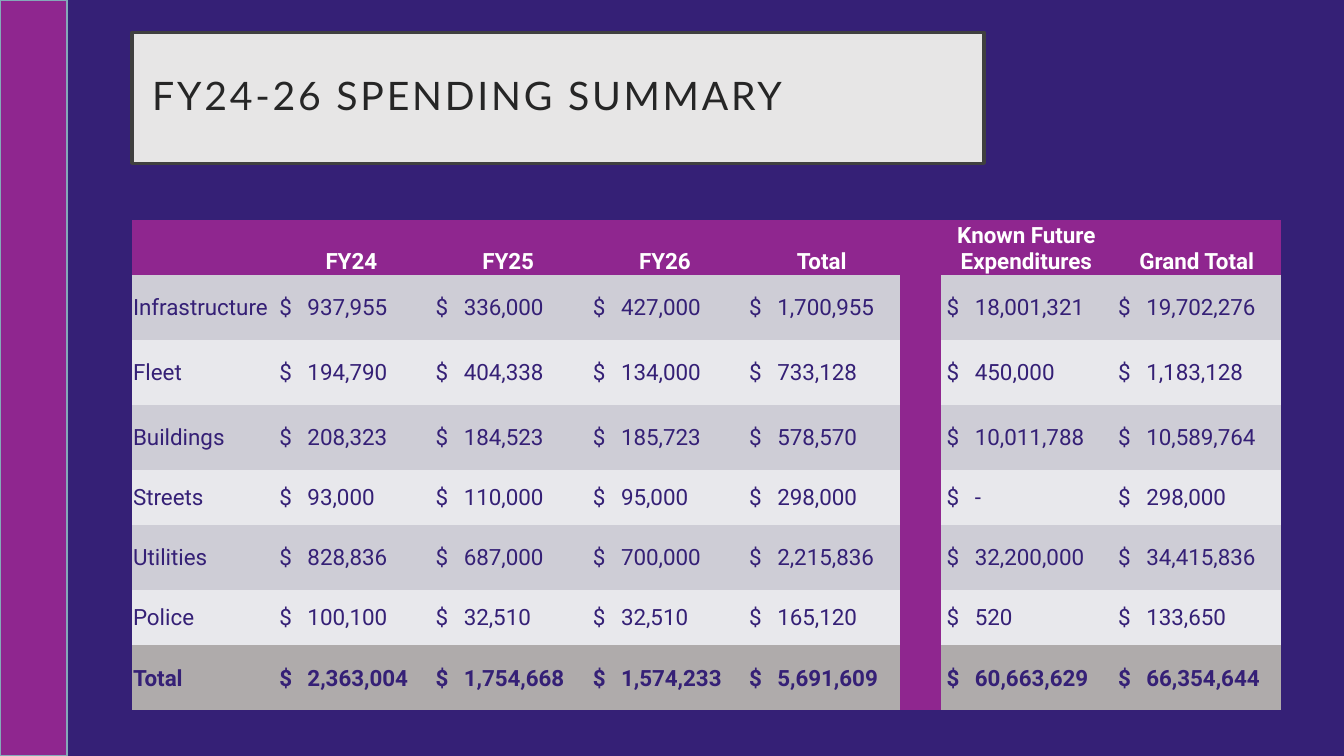
from pptx import Presentation
from pptx.dml.color import RGBColor
from pptx.enum.shapes import MSO_SHAPE
from pptx.enum.text import MSO_ANCHOR, MSO_AUTO_SIZE, PP_ALIGN
from pptx.oxml import parse_xml
from pptx.oxml.ns import nsdecls
from pptx.util import Inches, Pt

PURPLE, PLUM, GREY, WHITE = "352076", "8F268F", "AFABAB", "FFFFFF"
BANDS = ["E8E8EC", "CECDD6"]
WIDE, HIGH = 13.33, 7.5
LEFT = 1.31
COLS = [1.4, 1.55, 1.56, 1.55, 1.56, 0.4, 1.7, 1.68]
ROWS = [11, 13, 13, 13, 11, 13, 11, 13]
GAP = 5  # the plum column between the two blocks
DATA = """
|FY24|FY25|FY26|Total||Known Future Expenditures|Grand Total
Infrastructure|937,955|336,000|427,000|1,700,955||18,001,321|19,702,276
Fleet|194,790|404,338|134,000|733,128||450,000|1,183,128
Buildings|208,323|184,523|185,723|578,570||10,011,788|10,589,764
Streets|93,000|110,000|95,000|298,000||-|298,000
Utilities|828,836|687,000|700,000|2,215,836||32,200,000|34,415,836
Police|100,100|32,510|32,510|165,120||520|133,650
Total|2,363,004|1,754,668|1,574,233|5,691,609||60,663,629|66,354,644
"""


def paint(fill, color):
    fill.solid()
    fill.fore_color.rgb = RGBColor.from_string(color)


def style(font, color, **values):
    paint(font.fill, color)
    for name, value in values.items():
        setattr(font, name, value)


deck = Presentation()
deck.slide_width, deck.slide_height = Inches(WIDE), Inches(HIGH)
slide = deck.slides.add_slide(deck.slide_layouts[5])
paint(slide.background.fill, PURPLE)

# Side bar
bar = slide.shapes.add_shape(MSO_SHAPE.RECTANGLE, 0, 0, Inches(WIDE / 20), Inches(HIGH))
bar.shadow.inherit = False
paint(bar.fill, PLUM)
paint(bar.line.fill, "84A9B9")
bar.line.width = Pt(1)

# Title
title = slide.shapes.title
title.left, title.top, title.width, title.height = map(Inches, (LEFT, 0.32, 8.45, 1.3))
paint(title.fill, "E7E6E6")
paint(title.line.fill, "404040")
title.line.width = Pt(2.5)
frame = title.text_frame
frame.text = "FY24-26 SPENDING SUMMARY"
pad = Inches(0.2)
look = {"margin_left": pad, "margin_right": pad, "margin_top": pad, "margin_bottom": pad,
        "vertical_anchor": MSO_ANCHOR.MIDDLE, "word_wrap": True, "auto_size": MSO_AUTO_SIZE.NONE}
for name, value in look.items():
    setattr(frame, name, value)
head = frame.paragraphs[0]
head.alignment, head.line_spacing = PP_ALIGN.LEFT, 0.9
style(head.runs[0].font, "262626", name="Lato", size=Pt(28))
head.runs[0].font._element.set("spc", "200")

# Spending table
grid = [line.split("|") for line in DATA.strip().splitlines()]
tall = 4.87
table = slide.shapes.add_table(len(ROWS), len(COLS), Inches(LEFT), Inches(2.18),
                               Inches(sum(COLS)), Inches(tall)).table
table.first_row = table.horz_banding = False
table._tbl.tblPr[0].text = "{2D5ABB26-0587-4C30-8999-92F81FD0307C}"  # no style, no grid
for col, width in zip(table.columns, COLS):
    col.width = Inches(width)
for row, share in zip(table.rows, ROWS):
    row.height = Inches(tall * share / sum(ROWS))

for r, line in enumerate(grid):
    top, last = r == 0, r == len(grid) - 1
    for c, text in enumerate(line):
        cell = table.cell(r, c)
        paint(cell.fill, PLUM if top or c == GAP else GREY if last else BANDS[r % 2])
        money = bool(text) and not top and c > 0
        look = {"margin_left": Inches(0.06 if money else 0.01), "margin_right": Inches(0.01),
                "margin_top": Inches(0.01), "margin_bottom": 0,
                "vertical_anchor": MSO_ANCHOR.BOTTOM if top else MSO_ANCHOR.MIDDLE}
        for name, value in look.items():
            setattr(cell, name, value)
        if not text:
            continue
        para = cell.text_frame.paragraphs[0]
        para.alignment = PP_ALIGN.CENTER if top else PP_ALIGN.LEFT
        if money:
            para._p.get_or_add_pPr().append(parse_xml(
                f'<a:tabLst {nsdecls("a")}><a:tab pos="{Inches(0.28)}" algn="l"/></a:tabLst>'))
        run = para.add_run()
        run.text = f"$\t{text}" if money else text
        style(run.font, WHITE if top else PURPLE, name="Roboto", size=Pt(16), bold=top or last)

deck.save("out.pptx")
